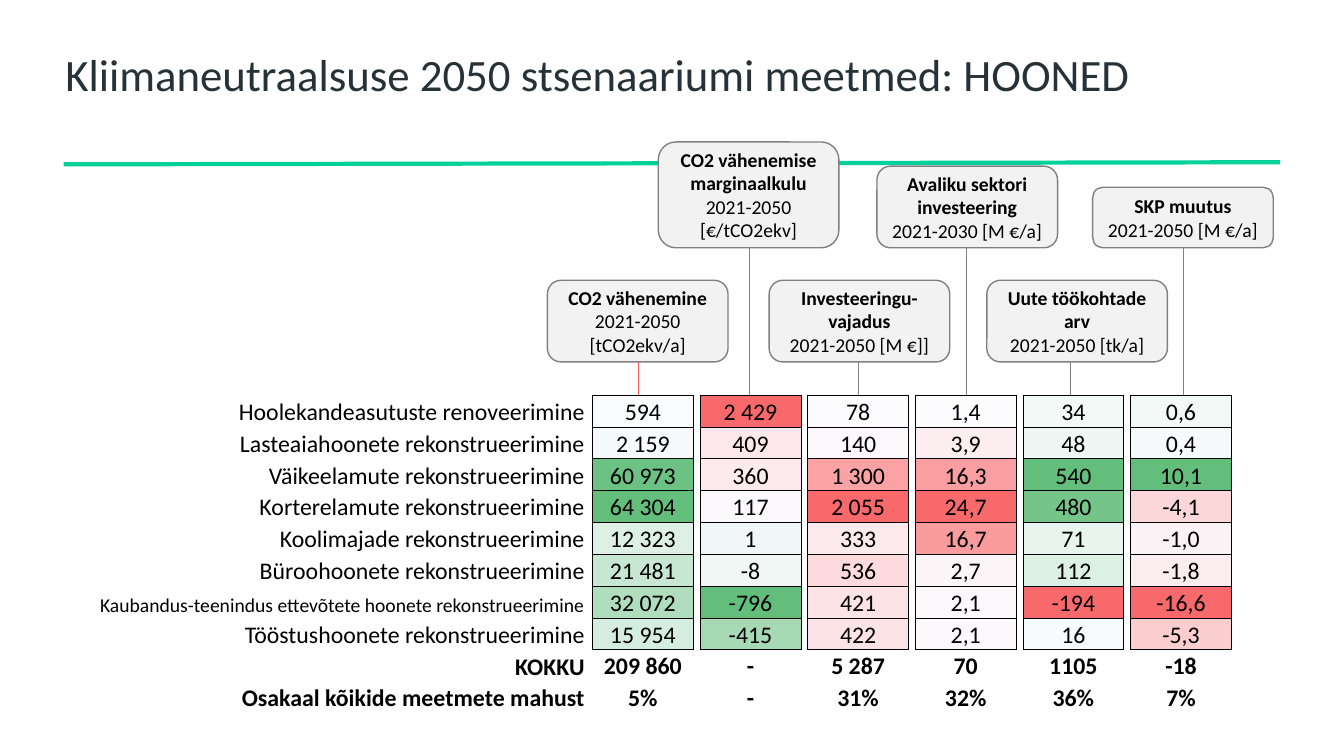
from lxml import etree
from pptx import Presentation
from pptx.dml.color import RGBColor
from pptx.enum import shapes, text
from pptx.oxml import ns
from pptx.util import Pt

FONT = "Calibri"
BLACK = RGBColor(0x00, 0x00, 0x00)
WHITE = RGBColor(0xFF, 0xFF, 0xFF)
GREY = RGBColor(0x80, 0x80, 0x80)
PALE = RGBColor(0xF2, 0xF2, 0xF2)
GREEN = RGBColor(0x00, 0xD1, 0x9A)
RED = RGBColor(0xFF, 0x5A, 0x59)
SLATE = RGBColor(0x26, 0x32, 0x38)

TABLE_LEFT, TABLE_TOP, ROW_HEIGHT = -33.84, 282.2, 22.75
LABEL_WIDTH, GAP_WIDTH, VALUE_WIDTH = 452.2, 4.9, 72
CALLOUT_WIDTH, LOW, HIGH = 129, 258.5, 177

CALLOUTS = [
    ("CO2 vähenemine", "2021-2050 [tCO2ekv/a]", 391, LOW, 58.3, 455.8, RED),
    ("CO2 vähenemise marginaalkulu", "2021-2050 [€/tCO2ekv]", 470.2, HIGH, 75.6, 535, GREY),
    ("Investeeringu-vajadus", "2021-2050 [M €]]", 549.4, LOW, 58.3, 613.4, GREY),
    ("Avaliku sektori investeering", "2021-2030 [M €/a]", 626.4, HIGH, 58.3, 690.5, GREY),
    ("Uute töökohtade arv", "2021-2050 [tk/a]", 704.9, LOW, 58.3, 764.6, GREY),
    ("SKP muutus", "2021-2050 [M €/a]", 780.5, HIGH, 43.2, 845.3, GREY),
]

MEASURES = [
    ("Hoolekandeasutuste renoveerimine", ("594", "2 429", "78", "1,4", "34", "0,6"),
     "F9FBFD F8696B FCFCFF FCFCFF F3F9F7 F3F9F7"),
    ("Lasteaiahoonete rekonstrueerimine", ("2 159", "409", "140", "3,9", "48", "0,4"),
     "F6FAFA FCE7EA FCF8FB FCEDF0 EFF7F4 F6FAFA"),
    ("Väikeelamute rekonstrueerimine", ("60 973", "360", "1 300", "16,3", "540", "10,1"),
     "6BC282 FCEAED FAA2A4 FA9FA1 63BE7B 63BE7B"),
    ("Korterelamute rekonstrueerimine", ("64 304", "117", "2 055", "24,7", "480", "-4,1"),
     "63BE7B FCF9FC F8696B F8696B 75C58A FBD7DA"),
    ("Koolimajade rekonstrueerimine", ("12 323", "1", "333", "16,7", "71", "-1,0"),
     "DEF0E5 F1F7F6 FCEAEC FA9C9E E8F4EE FBF2F5"),
    ("Büroohoonete rekonstrueerimine", ("21 481", "-8", "536", "2,7", "112", "-1,8"),
     "C8E7D2 F0F7F4 FCDADD FCF5F8 DDF0E4 FBECEF"),
    ("Kaubandus-teenindus ettevõtete hoonete rekonstrueerimine",
     ("32 072", "-796", "421", "2,1", "-194", "-16,6"),
     "AFDDBD 63BE7B FCE3E6 FCF8FB F8696B F8696B"),
    ("Tööstushoonete rekonstrueerimine", ("15 954", "-415", "422", "2,1", "16", "-5,3"),
     "D5EDDE A7D9B5 FCE3E6 FCF8FB F8FBFC FACDCF"),
]
TOTALS = [
    ("KOKKU", ("209 860", "-", "5 287", "70", "1105", "-18")),
    ("Osakaal kõikide meetmete mahust", ("5%", "-", "31%", "32%", "36%", "7%")),
]


def style_paragraph(para, size, color, bold=False, align=None):
    """Format a paragraph and its runs."""
    para.alignment = align
    for span in para.runs:
        span.font.name = FONT
        span.font.size = Pt(size)
        span.font.bold = bold
        span.font.color.rgb = color


def add_title(page, wording):
    """Add the slide heading."""
    box = page.shapes.add_textbox(Pt(39.6), Pt(29.5), Pt(881.3), Pt(46))
    box.text_frame.word_wrap = True
    box.text_frame.text = wording
    style_paragraph(box.text_frame.paragraphs[0], 32, SLATE)


def add_line(page, start, end, color, width):
    """Draw a straight line without shadow."""
    line = page.shapes.add_connector(
        shapes.MSO_CONNECTOR.STRAIGHT, *map(Pt, start + end))
    line.line.color.rgb = color
    line.line.width = Pt(width)
    etree.SubElement(line._element.spPr, ns.qn("a:effectLst"))


def add_callout(page, heading, period, left, bottom, height, stem, color):
    """Add a rounded column heading with its stem down to the table."""
    box = page.shapes.add_shape(
        shapes.MSO_SHAPE.ROUNDED_RECTANGLE,
        Pt(left), Pt(bottom - height), Pt(CALLOUT_WIDTH), Pt(height))
    box.shadow.inherit = False
    box.fill.solid()
    box.fill.fore_color.rgb = PALE
    box.line.color.rgb = GREY
    box.line.width = Pt(1)
    frame = box.text_frame
    frame.word_wrap = True
    frame.vertical_anchor = text.MSO_ANCHOR.MIDDLE
    frame.text = f"{heading}\n{period}"
    for para, bold in zip(frame.paragraphs, (True, False)):
        style_paragraph(para, 14, BLACK, bold, text.PP_ALIGN.CENTER)
    add_line(page, (stem, TABLE_TOP), (stem, bottom), color, 0.5)


def set_borders(cell, sides):
    """Draw thin black borders on the named sides and none elsewhere."""
    properties = cell._tc.get_or_add_tcPr()
    for side in "LRTB":
        border = etree.SubElement(properties, ns.qn(f"a:ln{side}"), w=str(Pt(0.5)))
        if side in sides:
            fill = etree.SubElement(border, ns.qn("a:solidFill"))
            etree.SubElement(fill, ns.qn("a:srgbClr"), val=str(BLACK))
        else:
            etree.SubElement(border, ns.qn("a:noFill"))


def fill_cell(cell, wording="", fill=WHITE, sides="", size=17, bold=False,
              align=text.PP_ALIGN.CENTER, anchor=text.MSO_ANCHOR.BOTTOM):
    """Set the text, borders and fill of a table cell."""
    set_borders(cell, sides)
    cell.fill.solid()
    cell.fill.fore_color.rgb = fill
    cell.margin_left = cell.margin_right = cell.margin_top = Pt(0.72)
    cell.margin_bottom = Pt(0)
    cell.vertical_anchor = anchor
    cell.text_frame.text = wording
    style_paragraph(cell.text_frame.paragraphs[0], size, BLACK, bold, align)


def add_measures_table(page):
    """Add the heat-coloured measures and the total rows."""
    rows = MEASURES + [(label, values, "FFFFFF " * 6) for label, values in TOTALS]
    widths = [LABEL_WIDTH] + [GAP_WIDTH, VALUE_WIDTH] * len(CALLOUTS)
    table = page.shapes.add_table(
        len(rows), len(widths), Pt(TABLE_LEFT), Pt(TABLE_TOP),
        Pt(sum(widths)), Pt(ROW_HEIGHT * len(rows))).table
    table.first_row = table.horz_banding = False
    for column, width in zip(table.columns, widths):
        column.width = Pt(width)
    for index, (label, values, fills) in enumerate(rows):
        table.rows[index].height = Pt(ROW_HEIGHT)
        total = index >= len(MEASURES)
        fill_cell(table.cell(index, 0), label, size=14 if len(label) > 40 else 17,
                  bold=total, align=text.PP_ALIGN.RIGHT)
        anchor = text.MSO_ANCHOR.MIDDLE if total else text.MSO_ANCHOR.BOTTOM
        frame = "LRTB" if not total else "T" if index == len(MEASURES) else ""
        for number, (value, fill) in enumerate(zip(values, fills.split())):
            gap = "" if total else "LR" if number else "R"
            fill_cell(table.cell(index, 2 * number + 1), sides=gap)
            fill_cell(table.cell(index, 2 * number + 2), value,
                      RGBColor.from_string(fill), frame, bold=total, anchor=anchor)


def main():
    """Build and save the slide."""
    deck = Presentation()
    deck.slide_width, deck.slide_height = Pt(960), Pt(540)
    page = deck.slides.add_slide(deck.slide_layouts[6])
    add_line(page, (45.4, 117.4), (914.4, 115.9), GREEN, 3)
    for callout in CALLOUTS:
        add_callout(page, *callout)
    add_title(page, "Kliimaneutraalsuse 2050 stsenaariumi meetmed: HOONED")
    add_measures_table(page)
    deck.save("out.pptx")


if __name__ == "__main__":
    main()
